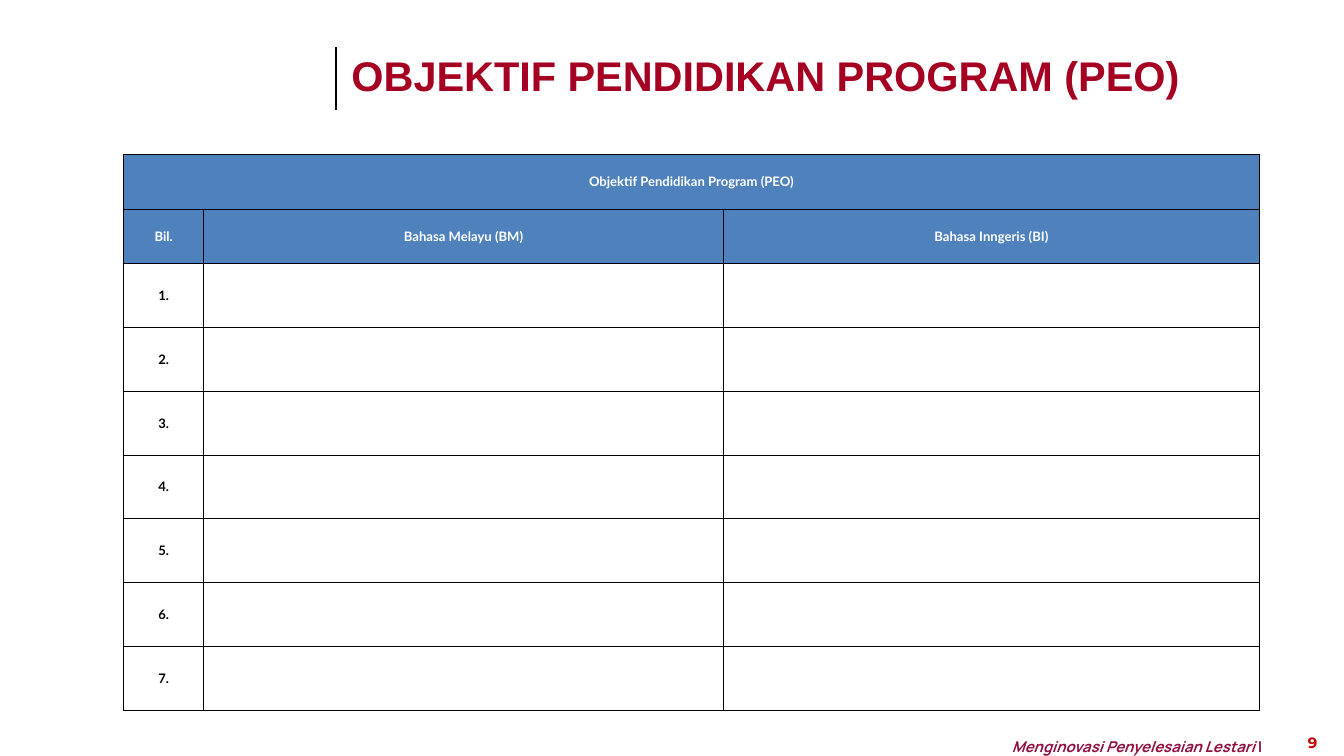
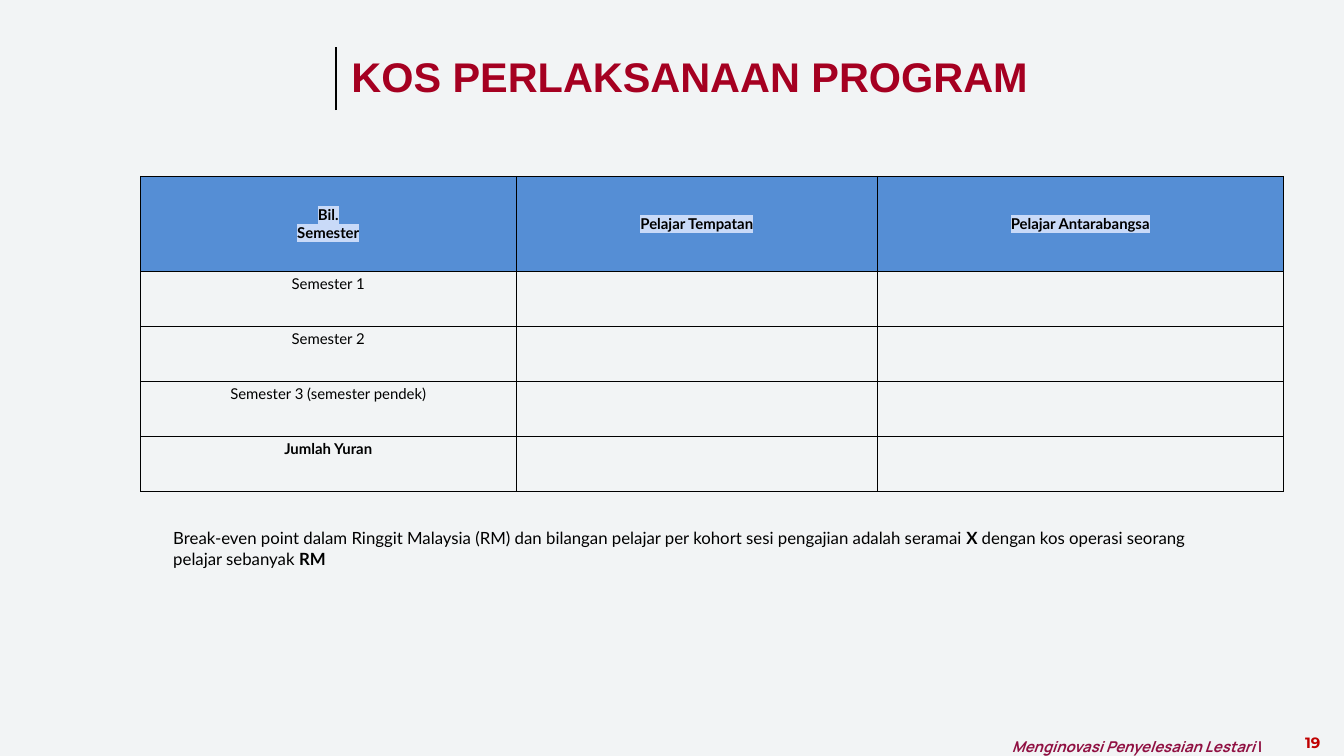
"""Build the programme objectives slide and the programme cost slide."""
from dataclasses import dataclass

import pptx
import pptx.dml.color
import pptx.enum.shapes
import pptx.enum.text
import pptx.oxml
import pptx.oxml.ns
import pptx.util
from pptx.util import Inches, Pt

ALIGN = pptx.enum.text.PP_ALIGN
ANCHOR = pptx.enum.text.MSO_ANCHOR


@dataclass(frozen=True)
class Theme:
    title: str = "A50021"
    slogan: str = "901042"
    number: str = "C00000"
    ink: str = "000000"
    white: str = "FFFFFF"
    highlight: str = "C9DAF8"
    title_size: float = 44.4
    note_size: float = 18
    label_size: float = 16
    small_size: float = 14
    title_font: str = "Arial"
    body_font: str = "Lato"
    slogan_font: str = "Manrope"
    number_font: str = "Montserrat"


THEME = Theme()

SLOGAN = [("Menginovasi Penyelesaian Lestari ", {"italic": True}), ("|", {})]

OBJECTIVES = {
    "title": "OBJEKTIF PENDIDIKAN PROGRAM (PEO)",
    "title_at": (5.13, 0.69, 12.78, 1.25),
    "title_spacing": 1.0,
    "background": "FFFFFF",
    "number": "9",
    "table_at": (1.84, 2.3),
    "columns": [1.19, 7.74, 7.97],
    "header_heights": [0.81, 0.81],
    "row_height": 0.95,
    "headers": [["Objektif Pendidikan Program (PEO)"],
                ["Bil.", "Bahasa Melayu (BM)", "Bahasa Inngeris (BI)"]],
    "labels": [(f"{count}.", True) for count in range(1, 8)],
    "header_fill": "4F81BD",
    "header_format": {"color": THEME.white},
    "size": THEME.small_size,
    "label_anchor": ANCHOR.MIDDLE,
}

COSTS = {
    "title": "KOS PERLAKSANAAN PROGRAM",
    "title_at": (5.13, 0.8, 12.78, 0.79),
    "title_spacing": 0.9,
    "background": "F2F4F5",
    "number": "19",
    "table_at": (2.09, 2.62),
    "columns": [5.59, 5.38, 6.03],
    "header_heights": [1.42],
    "row_height": 0.82,
    "headers": [["Bil.\nSemester", "Pelajar Tempatan", "Pelajar Antarabangsa"]],
    "labels": [("Semester 1", False), ("Semester 2", False),
               ("Semester 3 (semester pendek)", False), ("Jumlah Yuran", True)],
    "header_fill": "558ED5",
    "header_format": {"highlight": THEME.highlight},
    "size": THEME.label_size,
    "label_anchor": ANCHOR.TOP,
}

COST_NOTE = [
    ("Break-even point dalam Ringgit Malaysia (RM) dan bilangan pelajar per kohort "
     "sesi pengajian adalah seramai ", {}),
    ("X ", {"bold": True}),
    ("dengan kos operasi seorang pelajar sebanyak ", {}),
    ("RM", {"bold": True}),
]


def rgb(value):
    return pptx.dml.color.RGBColor.from_string(value)


def element(xml):
    return pptx.oxml.parse_xml(xml.replace(">", f" {pptx.oxml.ns.nsdecls('a')}>", 1))


def add_span(para, text, size=THEME.label_size, font=THEME.body_font, color=THEME.ink,
             bold=False, italic=False, highlight=None):
    span = para.add_run()
    span.text = text
    span.font.size = Pt(size)
    span.font.bold = bold
    span.font.italic = italic
    span.font.color.rgb = rgb(color)
    if highlight:
        span.font.fill
        span._r.get_or_add_rPr().append(
            element(f'<a:highlight><a:srgbClr val="{highlight}"/></a:highlight>'))
    span.font.name = font


def write(frame, text, align=ALIGN.LEFT, spacing=1.0, **style):
    """Fill a frame from a string with line breaks or a list of (text, style) spans."""
    lines = [[(line, {})] for line in text.split("\n")] if isinstance(text, str) else [text]
    frame.word_wrap = True
    for index, spans in enumerate(lines):
        para = frame.add_paragraph() if index else frame.paragraphs[0]
        para.alignment = align
        para.line_spacing = spacing
        for words, changes in spans:
            add_span(para, words, **{**style, **changes})


def add_text(page, at, text, margin=None, **style):
    box = page.shapes.add_textbox(*map(Inches, at))
    frame = box.text_frame
    if margin is not None:
        frame.margin_left = frame.margin_right = Inches(margin)
        frame.margin_top = frame.margin_bottom = Inches(margin)
    write(frame, text, **style)


def add_page(deck, content):
    page = deck.slides.add_slide(deck.slide_layouts[5])
    page.background.fill.solid()
    page.background.fill.fore_color.rgb = rgb(content["background"])

    title = page.shapes.title
    title.left, title.top, title.width, title.height = map(Inches, content["title_at"])
    title.text_frame.auto_size = pptx.enum.text.MSO_AUTO_SIZE.NONE
    title.text_frame.vertical_anchor = ANCHOR.TOP
    write(title.text_frame, content["title"], spacing=content["title_spacing"],
          size=THEME.title_size, font=THEME.title_font, color=THEME.title, bold=True)

    bar = page.shapes.add_connector(pptx.enum.shapes.MSO_CONNECTOR.STRAIGHT,
                                    Inches(5), Inches(1.64), Inches(5), Inches(0.7))
    bar.line.color.rgb = rgb(THEME.ink)
    bar.line.width = Pt(3)
    bar._element.spPr.append(element("<a:effectLst></a:effectLst>"))

    add_text(page, (15.06, 10.87, 4.2, 0.38), SLOGAN, margin=0, spacing=1.4,
             font=THEME.slogan_font, color=THEME.slogan, bold=True)
    add_text(page, (19.07, 10.87, 0.93, 0.37), content["number"], align=ALIGN.CENTER,
             font=THEME.number_font, color=THEME.number, bold=True)
    return page


def add_borders(cell):
    properties = cell._tc.get_or_add_tcPr()
    for index, side in enumerate("LRTB"):
        properties.insert(index, element(
            f'<a:ln{side} w="{Pt(0.75)}"><a:solidFill><a:srgbClr val="{THEME.ink}"/>'
            f'</a:solidFill></a:ln{side}>'))


def add_grid(page, content):
    headers, labels = content["headers"], content["labels"]
    widths = content["columns"]
    heights = content["header_heights"] + [content["row_height"]] * len(labels)
    size = (sum(widths), sum(heights))
    table = page.shapes.add_table(len(heights), len(widths),
                                  *map(Inches, content["table_at"] + size)).table
    table.first_row = table.horz_banding = False
    for column, width in zip(table.columns, widths):
        column.width = Inches(width)
    for row, height in zip(table.rows, heights):
        row.height = Inches(height)
    for cell in table.iter_cells():
        cell.fill.background()
        add_borders(cell)

    for row, texts in enumerate(headers):
        if len(texts) == 1:
            table.cell(row, 0).merge(table.cell(row, len(widths) - 1))
        for column, text in enumerate(texts):
            cell = table.cell(row, column)
            cell.fill.solid()
            cell.fill.fore_color.rgb = rgb(content["header_fill"])
            cell.vertical_anchor = ANCHOR.MIDDLE
            write(cell.text_frame, text, align=ALIGN.CENTER, size=content["size"],
                  bold=True, **content["header_format"])
    for row, (text, bold) in enumerate(labels, start=len(headers)):
        cell = table.cell(row, 0)
        cell.vertical_anchor = content["label_anchor"]
        write(cell.text_frame, text, align=ALIGN.CENTER, size=content["size"], bold=bold)


def main():
    deck = pptx.Presentation()
    deck.slide_width, deck.slide_height = Inches(20), Inches(11.25)
    for content in (OBJECTIVES, COSTS):
        page = add_page(deck, content)
        add_grid(page, content)
    add_text(page, (2.48, 7.81, 15.44, 0.71), COST_NOTE, size=THEME.note_size)
    deck.save("out.pptx")


if __name__ == "__main__":
    main()
